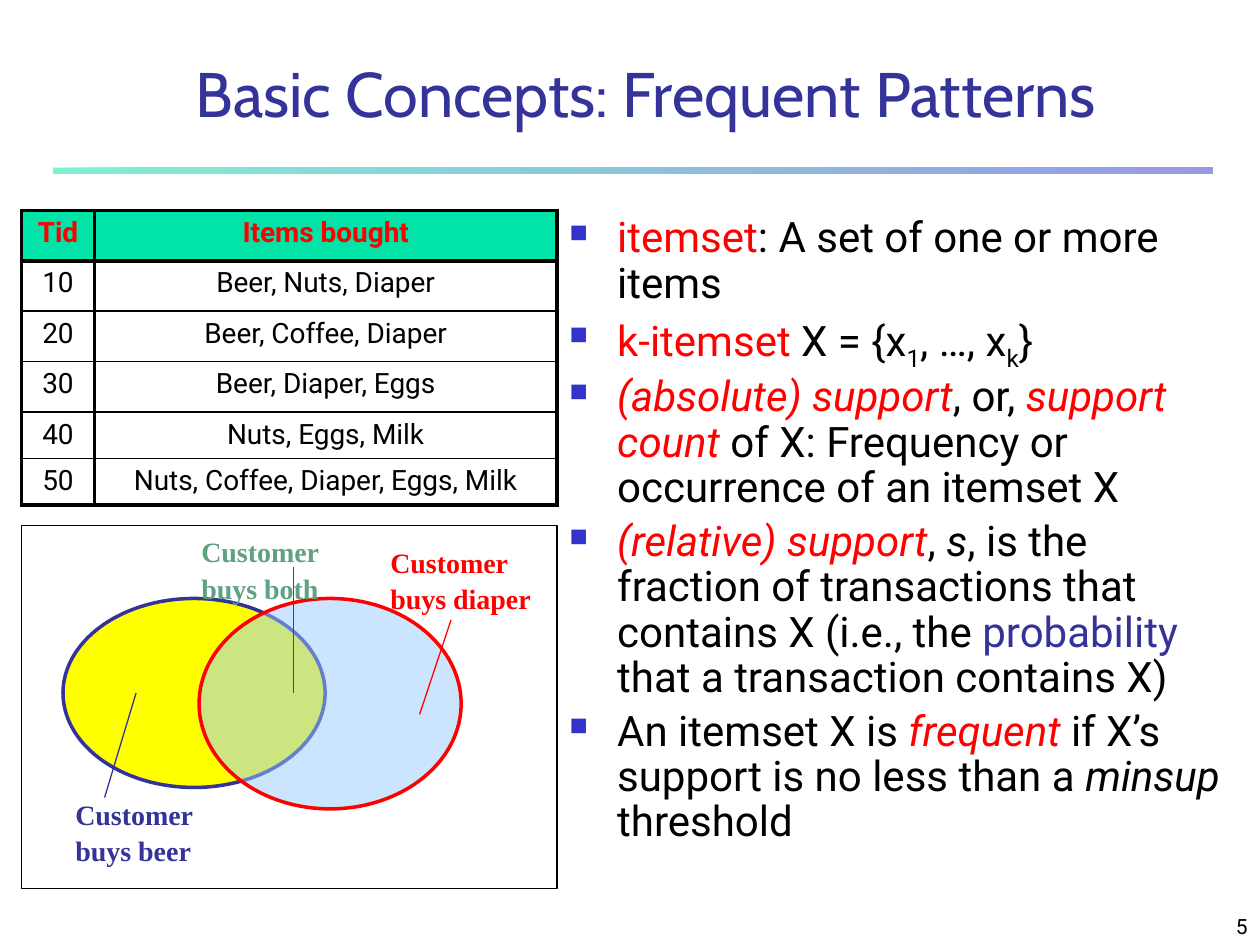
from lxml.etree import SubElement
from pptx import Presentation
from pptx.dml.color import RGBColor
from pptx.enum.shapes import MSO_CONNECTOR, MSO_SHAPE
from pptx.enum.text import MSO_ANCHOR, PP_ALIGN
from pptx.oxml import parse_xml
from pptx.oxml.ns import nsdecls, qn
from pptx.util import Inches, Pt

BLACK, RED, INDIGO, BLUE = "000000", "FF0000", "333399", "3333CC"
MINT, SAGE, GREEN = "00E4A8", "5FA180", "008000"
YELLOW, SKY = "FFFF00", "99CCFF"

TRANSACTIONS = [
    ("Tid", "Items bought"),
    ("10", "Beer, Nuts, Diaper"),
    ("20", "Beer, Coffee, Diaper"),
    ("30", "Beer, Diaper, Eggs"),
    ("40", "Nuts, Eggs, Milk"),
    ("50", "Nuts, Coffee, Diaper, Eggs, Milk"),
]

# Each definition is a list of (text, colour, style) spans.
DEFINITIONS = [
    [("itemset", RED, ""), (": A set of one or more items", BLACK, "")],
    [("k-itemset", RED, ""), (" X = {x", BLACK, ""), ("1", BLACK, "sub"),
     (", …, x", BLACK, ""), ("k", BLACK, "sub"), ("}", BLACK, "")],
    [("(absolute) support", RED, "italic"), (", or, ", BLACK, ""),
     ("support count", RED, "italic"),
     (" of X: Frequency or occurrence of an itemset X", BLACK, "")],
    [("(relative) support", RED, "italic"), (", ", BLACK, ""),
     ("s", BLACK, "italic"),
     (", is the fraction of transactions that contains X (i.e., the ", BLACK, ""),
     ("probability", INDIGO, ""), (" that a transaction contains X)", BLACK, "")],
    [("An itemset X is ", BLACK, ""), ("frequent", RED, "italic"),
     (" if X’s support is no less than a ", BLACK, ""),
     ("minsup", BLACK, "italic"), (" threshold", BLACK, "")],
]


def color(value):
    return RGBColor.from_string(value)


def set_attributes(target, values):
    for name, value in values.items():
        setattr(target, name, value)


def add_span(para, text, font, size, tint, **style):
    span = para.add_run()
    span.text = text
    set_attributes(span.font, {"name": font, "size": Pt(size), **style})
    span.font.color.rgb = color(tint)
    return span


def add_box(page, left, top, width, height, **frame_format):
    box = page.shapes.add_textbox(*map(Inches, (left, top, width, height)))
    set_attributes(box.text_frame, {"word_wrap": True, **frame_format})
    return box.text_frame


def add_line_of_text(page, place, text, font, size, tint, align):
    frame = add_box(page, *place, vertical_anchor=MSO_ANCHOR.BOTTOM)
    para = frame.paragraphs[0]
    para.alignment = align
    add_span(para, text, font, size, tint)


def set_alpha(fill_parent, percent):
    for node in fill_parent.iter(qn("a:srgbClr")):
        SubElement(node, qn("a:alpha"), val=str(percent * 1000))


def add_shape(page, kind, place, fill=None, line=None, width=0.75, alpha=None):
    shape = page.shapes.add_shape(kind, *map(Inches, place))
    shape.shadow.inherit = False
    if fill:
        shape.fill.solid()
        shape.fill.fore_color.rgb = color(fill)
    else:
        shape.fill.background()
    if alpha:
        set_alpha(shape._element.spPr, alpha)
    if line:
        shape.line.color.rgb = color(line)
        shape.line.width = Pt(width)
    else:
        shape.line.fill.background()
    return shape


def add_divider(page):
    bar = add_shape(page, MSO_SHAPE.RECTANGLE, (0.42, 1.33, 9.2, 0.05))
    bar.fill.gradient()
    bar.fill.gradient_angle = 0
    for stop, tint in zip(bar.fill.gradient_stops, (MINT, BLUE)):
        stop.color.rgb = color(tint)
    set_alpha(bar._element.spPr, 50)


def add_pointer(page, start, end, tint):
    pointer = page.shapes.add_connector(
        MSO_CONNECTOR.STRAIGHT, *map(Inches, start + end))
    pointer.line.color.rgb = color(tint)
    pointer.line.width = Pt(0.75)
    SubElement(pointer._element.spPr, qn("a:effectLst"))


def add_label(page, place, lines, tint, **frame_format):
    frame = add_box(page, *place, **frame_format)
    for index, text in enumerate(lines):
        para = frame.add_paragraph() if index else frame.paragraphs[0]
        para.line_spacing = 1.1
        add_span(para, text, "Times New Roman", 16, tint, bold=True)


def add_bullet(para):
    properties = para._p.get_or_add_pPr()
    properties.set("marL", str(Inches(0.38)))
    properties.set("indent", str(Inches(-0.38)))
    tint = SubElement(properties, qn("a:buClr"))
    SubElement(tint, qn("a:srgbClr"), val=BLUE)
    SubElement(properties, qn("a:buSzPct"), val="60000")
    SubElement(properties, qn("a:buChar"), char="■")


def add_definitions(page):
    frame = add_box(page, 4.42, 1.67, 5.42, 5.42)
    for index, spans in enumerate(DEFINITIONS):
        para = frame.add_paragraph() if index else frame.paragraphs[0]
        set_attributes(para, {"line_spacing": 0.9, "space_before": Pt(4.8)})
        add_bullet(para)
        for text, tint, style in spans:
            span = add_span(para, text, "Roboto", 24, tint,
                            italic=style == "italic")
            if style == "sub":
                span.font._element.set("baseline", "-25000")


def set_borders(cell, **widths):
    """Draw the L, R, T and B borders; they must precede the fill."""
    properties = cell._tc.get_or_add_tcPr()
    for index, (side, width) in enumerate(widths.items()):
        properties.insert(index, parse_xml(
            f'<a:ln{side} {nsdecls("a")} w="{Pt(width)}"><a:solidFill>'
            f'<a:srgbClr val="{BLACK}"/></a:solidFill></a:ln{side}>'))


def add_transactions(page):
    last = len(TRANSACTIONS) - 1
    table = page.shapes.add_table(
        len(TRANSACTIONS), 2, *map(Inches, (0.17, 1.67, 4.25, 2.33))).table
    set_attributes(table, {"first_row": False, "horz_banding": False})
    for column, width in zip(table.columns, (0.58, 3.67)):
        column.width = Inches(width)
    for r, values in enumerate(TRANSACTIONS):
        header = r == 0
        table.rows[r].height = Inches(0.4 if r < 4 else 0.37)
        for c, text in enumerate(values):
            cell = table.cell(r, c)
            if header:
                cell.fill.solid()
                cell.fill.fore_color.rgb = color(MINT)
            else:
                cell.fill.background()
            set_borders(cell, L=2.25, R=2.25, T=2.25 if r < 2 else 1,
                        B=2.25 if r in (0, last) else 1)
            para = cell.text_frame.paragraphs[0]
            set_attributes(para, {"alignment": PP_ALIGN.CENTER,
                                  "space_before": Pt(3.2)})
            add_span(para, text, "Roboto", 16, RED if header else BLACK,
                     bold=header)


def add_venn_diagram(page):
    add_shape(page, MSO_SHAPE.OVAL, (0.5, 4.75, 2.08, 1.5), YELLOW, INDIGO, 2)
    add_shape(page, MSO_SHAPE.OVAL, (1.58, 4.75, 2.08, 1.67), SKY, RED, 2, 50)
    add_pointer(page, (1.08, 5.5), (0.83, 6.33), INDIGO)
    add_pointer(page, (3.33, 5.67), (3.58, 4.92), RED)
    add_pointer(page, (2.33, 5.5), (2.33, 4.5), GREEN)
    add_label(page, (3, 4.25, 1.33, 0.69), ("Customer", "buys diaper"), RED)
    add_label(page, (1.5, 4.17, 1.14, 0.69), ("Customer", "buys both"), SAGE)
    add_label(page, (0.5, 6.25, 1.14, 0.69), ("Customer", "buys beer"), INDIGO,
              word_wrap=False)
    add_shape(page, MSO_SHAPE.RECTANGLE, (0.17, 4.17, 4.25, 2.88), line=BLACK)


def main():
    deck = Presentation()
    set_attributes(deck, {"slide_width": Inches(10), "slide_height": Inches(7.5)})
    page = deck.slides.add_slide(deck.slide_layouts[6])
    add_divider(page)
    add_line_of_text(page, (7.92, 7.08, 2.08, 0.42), "5", "Roboto", 12, BLACK,
                     PP_ALIGN.RIGHT)
    add_line_of_text(page, (0.75, 0.25, 8.75, 0.83),
                     "Basic Concepts: Frequent Patterns", "Cabin", 36, INDIGO,
                     PP_ALIGN.CENTER)
    add_definitions(page)
    add_venn_diagram(page)
    add_transactions(page)
    deck.save("out.pptx")


if __name__ == "__main__":
    main()
